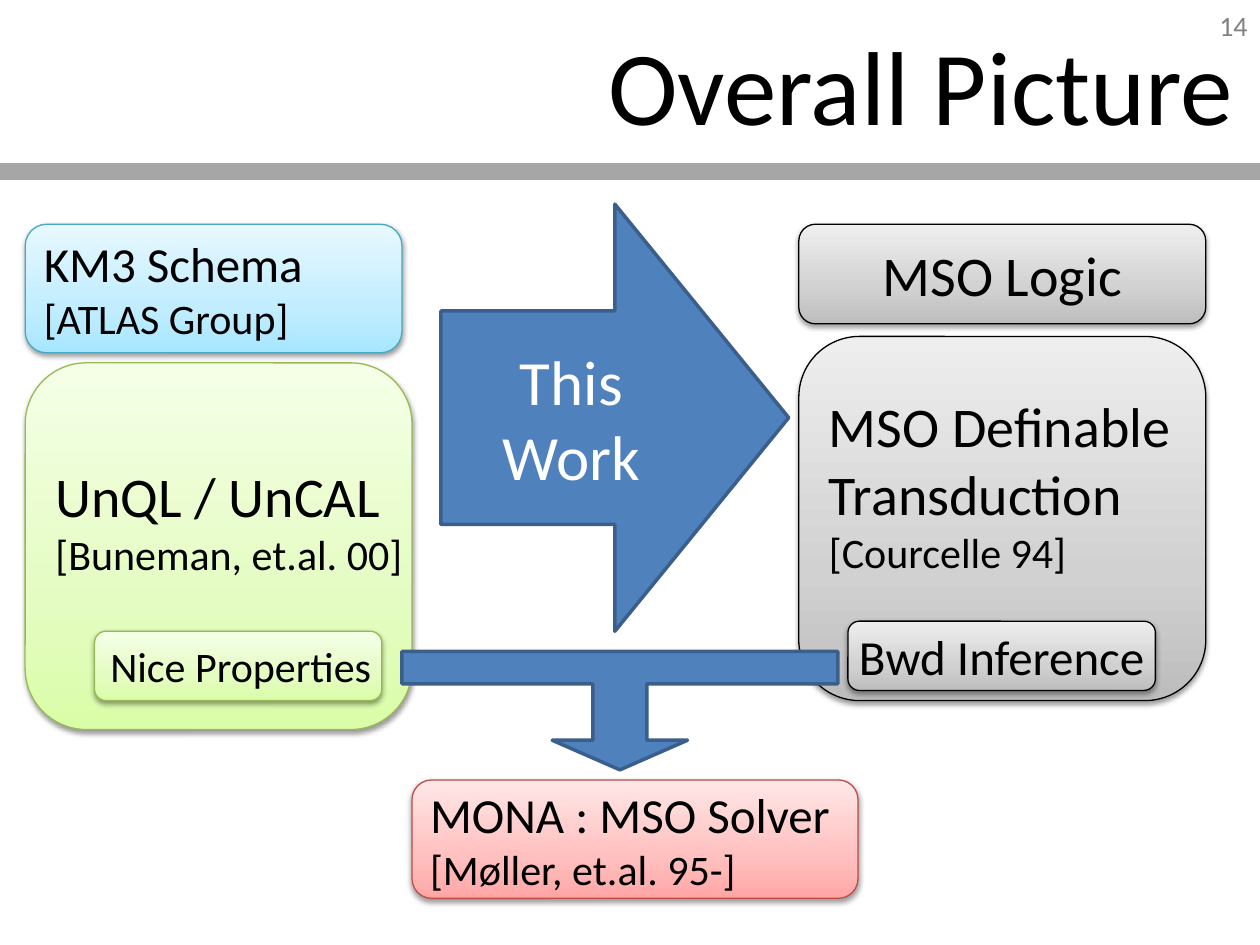
from copy import deepcopy

from lxml import etree
from pptx import Presentation
from pptx.dml.color import RGBColor
from pptx.enum.shapes import MSO_CONNECTOR, MSO_SHAPE
from pptx.enum.text import MSO_ANCHOR, PP_ALIGN
from pptx.oxml.ns import qn
from pptx.util import Inches, Pt

LEFT, CENTER, RIGHT = PP_ALIGN.LEFT, PP_ALIGN.CENTER, PP_ALIGN.RIGHT
MIDDLE = MSO_ANCHOR.MIDDLE
ROUNDED = MSO_SHAPE.ROUNDED_RECTANGLE
RIGHT_ARROW = MSO_SHAPE.RIGHT_ARROW
DOWN_CALLOUT = MSO_SHAPE.DOWN_ARROW_CALLOUT
STRAIGHT = MSO_CONNECTOR.STRAIGHT
rgb = RGBColor.from_string

# Each theme: line colour, then gradient stops from bottom to top
GREEN = ("98B955", ("DAFDA7", "E4FCC2", "F5FFE7"))
GRAY = ("000000", ("BDBDBD", "D1D1D1", "EEEEEE"))
BLUE = ("46AAC5", ("A7E6FF", "C1EDFF", "E7F8FF"))
RED = ("BF4C48", ("FFA6A5", "FFC0BF", "FFE7E7"))
STOP_POSITIONS = (0, 0.35, 1)


def write(frame, text, sizes, color, align):
    """Fill a text frame; sizes holds one font size per paragraph."""
    frame.text = text
    frame.vertical_anchor = MIDDLE
    for paragraph, size in zip(frame.paragraphs, sizes):
        paragraph.alignment = align
        for run in paragraph.runs:
            run.font.size = Pt(size)
            run.font.name = "Calibri"
            run.font.color.rgb = rgb(color)


def add_box(at, theme):
    """Add a rounded box with a vertical gradient and a soft shadow."""
    line_color, stop_colors = theme
    box = slide.shapes.add_shape(ROUNDED, *map(Inches, at))
    box.line.color.rgb = rgb(line_color)
    box.line.width = Pt(0.75)
    box.fill.gradient()
    box.fill.gradient_angle = 90
    stop_list = box._element.spPr.find(".//" + qn("a:gsLst"))
    stop_list.append(deepcopy(stop_list[-1]))
    for stop, position, color in zip(box.fill.gradient_stops, STOP_POSITIONS, stop_colors):
        stop.position = position
        stop.color.rgb = rgb(color)
    box.shadow.inherit = False
    effects = box._element.spPr.find(qn("a:effectLst"))
    shadow = etree.SubElement(effects, qn("a:outerShdw"), blurRad=str(Pt(3.1)),
                              dist=str(Pt(1.6)), dir="5400000", rotWithShape="0")
    black = etree.SubElement(shadow, qn("a:srgbClr"), val="000000")
    etree.SubElement(black, qn("a:alpha"), val="38000")
    return box


prs = Presentation()
prs.slide_width, prs.slide_height = Inches(10), Inches(7.5)
slide = prs.slides.add_slide(prs.slide_layouts[5])

# Header
title = slide.shapes.title
title.left, title.top, title.width, title.height = map(Inches, (0.89, 0.04, 9, 1.25))
write(title.text_frame, "Overall Picture", [60], "000000", RIGHT)

page_number = slide.shapes.add_textbox(*map(Inches, (7.67, 0, 2.33, 0.4)))
page_number.text_frame.word_wrap = True
write(page_number.text_frame, "14", [16], "808080", RIGHT)

rule = slide.shapes.add_connector(STRAIGHT, *map(Inches, (0, 1.36, 10, 1.36)))
rule.line.color.rgb = rgb("A6A6A6")
rule.line.width = Pt(10)
etree.SubElement(rule._element.spPr, qn("a:effectLst"))

# Boxes: place, theme, text, font sizes, alignment, bottom inset
# The deep insets lift the text above the small boxes nested inside.
boxes = [
    ((0.2, 2.88, 3.07, 2.91), GREEN, "UnQL / UnCAL\n[Buneman, et.al. 00]", (32, 24), LEFT, 0.46),
    ((6.34, 2.67, 3.23, 2.89), GRAY, "MSO Definable\vTransduction\n[Courcelle 94]", (32, 24), LEFT, 0.59),
    ((0.2, 1.78, 2.99, 1.02), BLUE, "KM3 Schema\n[ATLAS Group]", (28, 24), LEFT, 0.05),
    ((6.34, 1.78, 3.23, 0.79), GRAY, "MSO Logic", (32,), CENTER, 0.05),
    ((0.75, 5.01, 2.28, 0.55), GREEN, "Nice Properties", (24,), LEFT, 0.05),
    ((3.27, 6.19, 3.54, 0.94), RED, "MONA : MSO Solver\n[Møller, et.al. 95-]", (28, 24), LEFT, 0.05),
    ((6.73, 4.93, 2.44, 0.55), GRAY, "Bwd Inference", (28,), CENTER, 0.05),
]
for at, theme, text, sizes, align, bottom_inset in boxes:
    frame = add_box(at, theme).text_frame
    frame.word_wrap = False
    frame.margin_bottom = Inches(bottom_inset)
    write(frame, text, sizes, "000000", align)

# Arrows
this_work = slide.shapes.add_shape(RIGHT_ARROW, *map(Inches, (3.5, 1.62, 2.76, 3.39)))
write(this_work.text_frame, "This Work", [36], "FFFFFF", CENTER)

to_solver = slide.shapes.add_shape(DOWN_CALLOUT, *map(Inches, (3.19, 5.17, 3.46, 0.94)))
for index, ratio in enumerate((0.57, 0.72, 0.32, 0.35)):
    to_solver.adjustments[index] = ratio
for index, ratio in enumerate((0.457, 0.571, 0.25, 0.274)):
    to_solver.adjustments[index] = ratio

for arrow in (this_work, to_solver):
    arrow.fill.solid()
    arrow.fill.fore_color.rgb = rgb("4F81BD")
    arrow.line.color.rgb = rgb("3A5F8C")
    arrow.line.width = Pt(2)
    arrow.shadow.inherit = False

prs.save("out.pptx")
